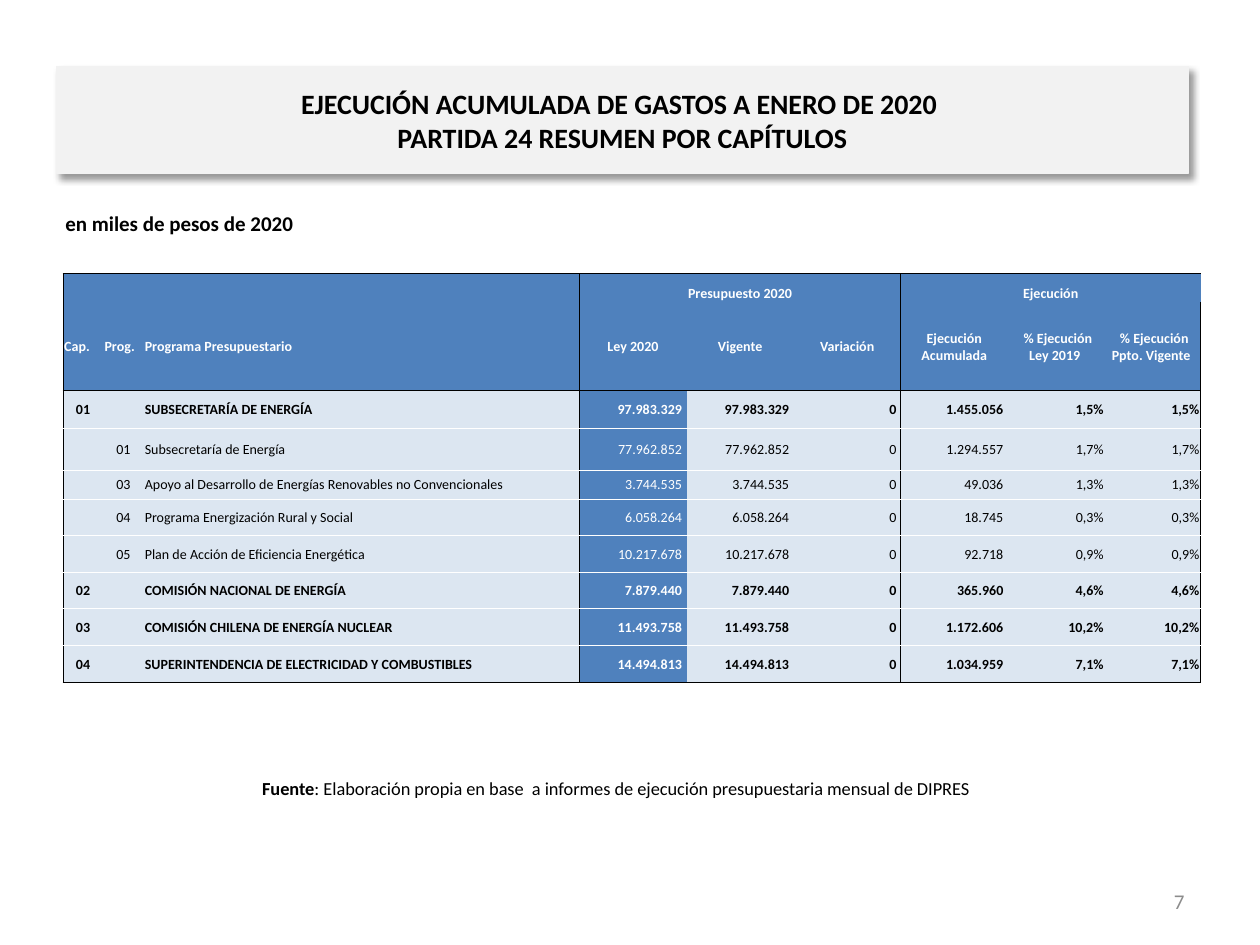
from lxml import etree
from pptx import Presentation
from pptx.dml.color import RGBColor
from pptx.enum.text import MSO_ANCHOR, MSO_AUTO_SIZE, PP_ALIGN
from pptx.oxml import parse_xml
from pptx.oxml.ns import nsdecls, qn
from pptx.util import Inches, Pt

LEFT, MID, RIGHT, JUST = PP_ALIGN.LEFT, PP_ALIGN.CENTER, PP_ALIGN.RIGHT, PP_ALIGN.JUSTIFY
TOP, CENTRE, BASE = MSO_ANCHOR.TOP, MSO_ANCHOR.MIDDLE, MSO_ANCHOR.BOTTOM
FIXED = MSO_AUTO_SIZE.NONE

HUES = {"ink": "000000", "white": "FFFFFF", "blue": "4F81BD",
        "pale": "DCE6F1", "panel": "F2F2F2", "gray": "8C8C8C"}

COLS = [0.32, 0.32, 3.46, 0.85, 0.85, 0.85, 0.85, 0.77, 0.76]
ROWS = [0.23, 0.7, 0.3, 0.33, 0.23, 0.29, 0.29, 0.29, 0.29, 0.3]
GROUPS = {3: "Presupuesto 2020", 6: "Ejecución"}
HEADS = ["Cap.", "Prog.", "Programa Presupuestario", "Ley 2020", "Vigente", "Variación",
         "Ejecución Acumulada", " % Ejecución Ley 2019 ", " % Ejecución Ppto. Vigente "]
DATA = [
    ("01", "", "SUBSECRETARÍA DE ENERGÍA", "97.983.329", "1.455.056", "1,5%"),
    ("", "01", "Subsecretaría de Energía", "77.962.852", "1.294.557", "1,7%"),
    ("", "03", "Apoyo al Desarrollo de Energías Renovables no Convencionales",
     "3.744.535", "49.036", "1,3%"),
    ("", "04", "Programa Energización Rural y Social", "6.058.264", "18.745", "0,3%"),
    ("", "05", "Plan de Acción de Eficiencia Energética", "10.217.678", "92.718", "0,9%"),
    ("02", "", "COMISIÓN NACIONAL DE ENERGÍA", "7.879.440", "365.960", "4,6%"),
    ("03", "", "COMISIÓN CHILENA DE ENERGÍA NUCLEAR", "11.493.758", "1.172.606", "10,2%"),
    ("04", "", "SUPERINTENDENCIA DE ELECTRICIDAD Y COMBUSTIBLES",
     "14.494.813", "1.034.959", "7,1%"),
]


def rgb(hue):
    return RGBColor.from_string(HUES[hue])


def apply(item, form):
    for name, value in form.items():
        setattr(item, name, value)


def write(frame, runs, size, hue="ink", align=LEFT):
    para = frame.paragraphs[0]
    para.alignment = align
    for text, bold in runs:
        para.add_run().text = text
        for run in para.runs[-1:]:
            apply(run.font, {"name": "Calibri", "size": Pt(size), "bold": bold})
            run.font.color.rgb = rgb(hue)


def add_title(slide, box):
    title = slide.shapes.title
    apply(title, dict(zip(("left", "top", "width", "height"), map(Inches, box))))
    title.fill.solid()
    title.fill.fore_color.rgb = rgb("panel")
    title.line.color.rgb = rgb("panel")
    title.line.width = Pt(0.75)
    frame = title.text_frame
    apply(frame, {"word_wrap": True, "auto_size": FIXED, "vertical_anchor": CENTRE,
                  "margin_left": Inches(0.11), "margin_right": Inches(0.11),
                  "margin_top": Inches(0.05), "margin_bottom": Inches(0.05)})
    para = frame.paragraphs[0]
    para.text = "EJECUCIÓN ACUMULADA DE GASTOS A ENERO DE 2020 \vPARTIDA 24 RESUMEN POR CAPÍTULOS"
    para.alignment = MID
    for run in para.runs:
        apply(run.font, {"name": "Calibri", "size": Pt(16), "bold": True})
        run.font.color.rgb = rgb("ink")
    title._element.spPr.append(parse_xml(
        f'<a:effectLst {nsdecls("a")}><a:outerShdw blurRad="{Pt(4)}" dist="{Pt(3)}" '
        f'dir="{45 * 60000}" algn="tl" rotWithShape="0"><a:srgbClr val="{HUES["ink"]}">'
        '<a:alpha val="40000"/></a:srgbClr></a:outerShdw></a:effectLst>'))


def add_note(slide, box, runs, size, hue="ink", align=LEFT, anchor=TOP):
    frame = slide.shapes.add_textbox(*map(Inches, box)).text_frame
    apply(frame, {"word_wrap": True, "auto_size": FIXED, "vertical_anchor": anchor})
    write(frame, runs, size, hue, align)


def edge(cell, sides):
    props = cell._tc.get_or_add_tcPr()
    for spot, side in enumerate("LRTB"):
        hue = sides.get(side)
        paint = (f'<a:solidFill><a:srgbClr val="{HUES[hue]}"/></a:solidFill>'
                 if hue else "<a:noFill/>")
        props.insert(spot, parse_xml(
            f'<a:ln{side} {nsdecls("a")} w="{Pt(0.5)}">{paint}</a:ln{side}>'))


def sides_of(row, col):
    last = len(ROWS) - 1
    sides = {"T": "ink" if row in (0, 2) else "white",
             "B": "ink" if row in (1, last) else "white"}
    if row < 2:
        sides.pop("B" if row == 0 else "T")
    if col % 3 == 0:
        sides["L"] = "ink"
    if col % 3 == 2:
        sides["R"] = "ink"
    return sides


def fill_cell(cell, row, col, text, bold, align):
    head = row < 2
    dark = head or col == 3
    apply(cell, {"margin_left": Inches(0.01), "margin_right": Inches(0.01),
                 "margin_top": Inches(0.01), "margin_bottom": 0,
                 "vertical_anchor": BASE if row == 0 else CENTRE})
    cell.fill.solid()
    cell.fill.fore_color.rgb = rgb("blue" if dark else "pale")
    edge(cell, sides_of(row, col))
    if text:
        write(cell.text_frame, [(text, bold)], 8, "white" if dark else "ink", align)
    else:
        para = cell.text_frame.paragraphs[0]._p
        etree.SubElement(para, qn("a:endParaRPr"), sz="800")


def add_grid(slide, box):
    grid = slide.shapes.add_table(len(ROWS), len(COLS), *map(Inches, box)).table
    apply(grid, {"first_row": False, "horz_banding": False})
    for part, size in zip(grid.columns, COLS):
        part.width = Inches(size)
    for part, size in zip(grid.rows, ROWS):
        part.height = Inches(size)
    lines = [[GROUPS.get(col, "") for col in range(len(COLS))], HEADS]
    for cap, prog, name, law, spent, rate in DATA:
        lines.append([cap, prog, name, law + " ", law + " ", "0 ", spent + " ", rate, rate])
    for row, line in enumerate(lines):
        if row < 2:
            aligns = [LEFT] * 3 + [MID] * 6
        else:
            aligns = [MID, MID, JUST] + [RIGHT] * 6
        bold = row < 2 or bool(line[0])
        for col, text in enumerate(line):
            fill_cell(grid.cell(row, col), row, col, text, bold, aligns[col])
    for col in GROUPS:
        grid.cell(0, col).merge(grid.cell(0, col + 2))


def main():
    deck = Presentation()
    apply(deck, {"slide_width": Inches(10), "slide_height": Inches(7.5)})
    slide = deck.slides.add_slide(deck.slide_layouts[5])
    add_title(slide, (0.45, 0.53, 8.98, 0.85))
    add_note(slide, (0.42, 1.62, 7.5, 0.37), [("en miles de pesos de 2020", True)], 12)
    add_grid(slide, (0.5, 2.17, 9, 3.24))
    add_note(slide, (0.42, 6.12, 8.94, 0.29), [
        ("Fuente", True),
        (": Elaboración propia en base  a informes de ejecución presupuestaria mensual de DIPRES",
         False)], 10.5, align=MID)
    add_note(slide, (7.17, 6.95, 2.33, 0.4), [("7", False)], 12, "gray", RIGHT, CENTRE)
    deck.save("out.pptx")


if __name__ == "__main__":
    main()
